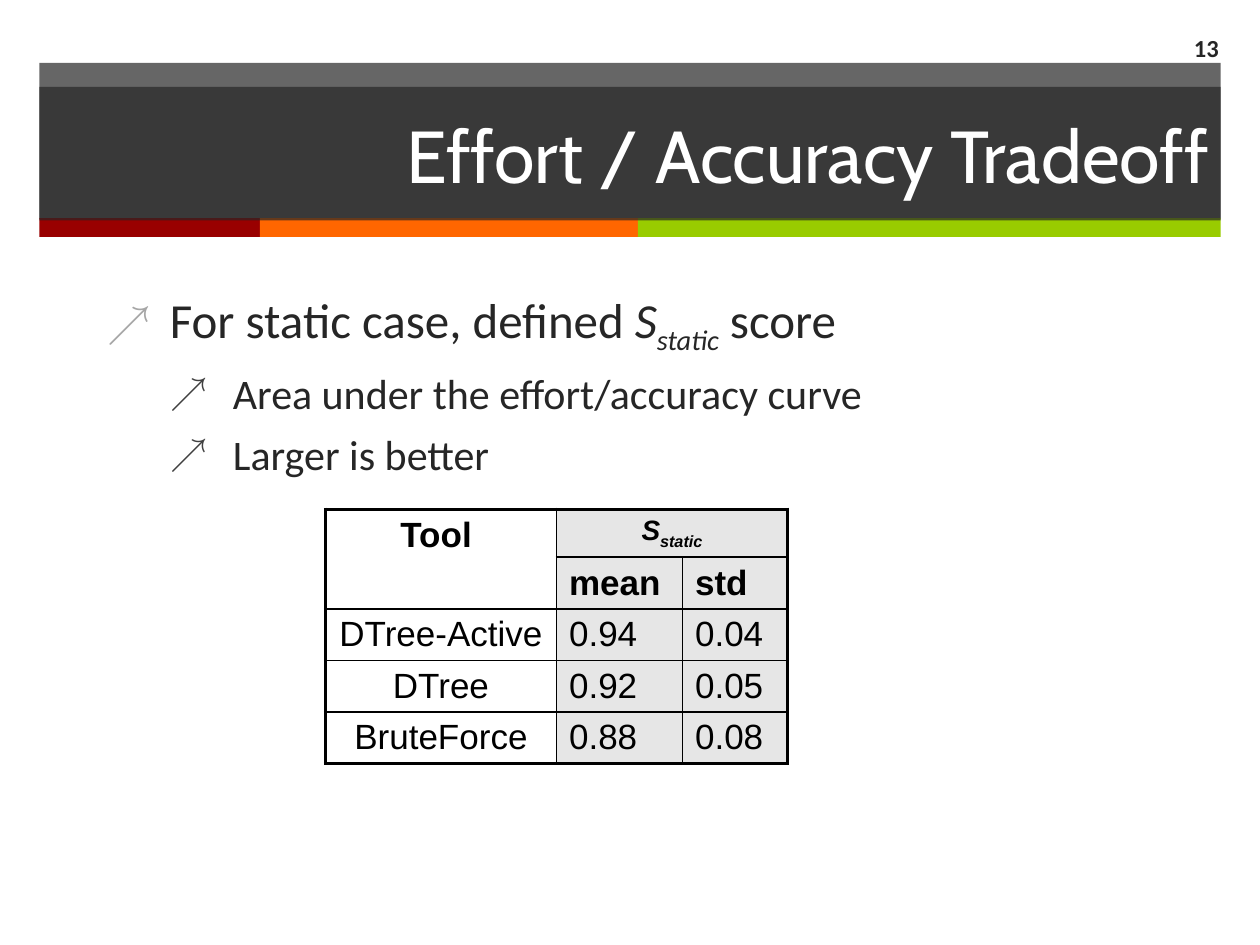
import pptx
import pptx.util
import pptx.dml.color
import pptx.enum.shapes
import pptx.enum.text
import pptx.oxml.ns
from lxml import etree

Pt = pptx.util.Pt
RGB = pptx.dml.color.RGBColor
ALIGN = pptx.enum.text.PP_ALIGN
MIDDLE = pptx.enum.text.MSO_ANCHOR.MIDDLE
qn = pptx.oxml.ns.qn

WHITE = RGB(0xFF, 0xFF, 0xFF)
BLACK = RGB(0, 0, 0)
CHARCOAL = RGB(0x26, 0x26, 0x26)
SHADE = RGB(0xE6, 0xE6, 0xE6)
RED = RGB(0x99, 0, 0)
ORANGE = RGB(0xFF, 0x66, 0)
GREEN = RGB(0x99, 0xCC, 0)
BULLET_LIGHT = RGB(0xA6, 0xA6, 0xA6)
BULLET_DARK = RGB(0x40, 0x40, 0x40)

TITLE = "Effort / Accuracy Tradeoff"
PAGE = "13"
# Each text is a list of (words, style); style is "", "italic" or "sub"
SCORE = [("S", "italic"), ("static", "sub")]
POINTS = [
    (0, [("For static case, defined ", "")] + SCORE + [(" score", "")]),
    (1, [("Area under the effort/accuracy curve", "")]),
    (1, [("Larger is better", "")]),
]
# level: text size, left indent, space before, bullet colour
LEVELS = {0: (28, 36, 20, BULLET_LIGHT), 1: (24, 72, 6, BULLET_DARK)}
HEADERS = [["Tool ", SCORE, None], [None, "mean", "std"]]
RESULTS = [("DTree-Active", "0.94", "0.04"),
           ("DTree", "0.92", "0.05"),
           ("BruteForce", "0.88", "0.08")]
COLUMN_WIDTHS = [132, 72, 60]
ROW_HEIGHTS = [27.4] + [29.5] * 4
STRIPES = [(RED, 126), (ORANGE, 216), (GREEN, 333)]
BAR_LEFT = 22.5
BAR_WIDTH = sum(width for _, width in STRIPES)


def add_runs(paragraph, parts, size, font, color, bold=False):
    for words, style in parts:
        run = paragraph.add_run()
        run.text = words
        run.font.size = Pt(size)
        run.font.name = font
        run.font.color.rgb = color
        run.font.bold = bold
        run.font.italic = style != ""
        if style == "sub":
            run.font._element.set("baseline", "-25000")


def add_bar(slide, left, top, width, height, color, opacity=100):
    bar = slide.shapes.add_shape(pptx.enum.shapes.MSO_SHAPE.RECTANGLE,
                                 Pt(left), Pt(top), Pt(width), Pt(height))
    bar.shadow.inherit = False
    bar.fill.solid()
    bar.fill.fore_color.rgb = color
    bar.line.fill.background()
    if opacity < 100:
        tint = bar.fill._xPr.find(".//" + qn("a:srgbClr"))
        etree.SubElement(tint, qn("a:alpha"), val=str(opacity * 1000))
    return bar


def add_text_box(slide, left, top, width, height):
    frame = slide.shapes.add_textbox(Pt(left), Pt(top), Pt(width), Pt(height)).text_frame
    frame.word_wrap = True
    return frame


def set_bullet(paragraph, indent, color):
    props = paragraph._p.get_or_add_pPr()
    props.set("marL", str(Pt(indent)))
    props.set("indent", str(Pt(-36)))
    tint = etree.SubElement(props, qn("a:buClr"))
    etree.SubElement(tint, qn("a:srgbClr"), val=str(color))
    etree.SubElement(props, qn("a:buSzPct"), val="90000")
    etree.SubElement(props, qn("a:buFont"), typeface="Arial")
    etree.SubElement(props, qn("a:buChar"), char="↗")


def set_borders(cell, outer_sides):
    """Draw thin borders, and thick ones on the sides at the table's edge."""
    props = cell._tc.get_or_add_tcPr()
    for position, side in enumerate("LRTB"):
        width = Pt(2.25 if side in outer_sides else 1)
        line = etree.Element(qn("a:ln" + side), w=str(width))
        fill = etree.SubElement(line, qn("a:solidFill"))
        etree.SubElement(fill, qn("a:srgbClr"), val=str(BLACK))
        props.insert(position, line)


def add_header(slide):
    add_bar(slide, BAR_LEFT, 36, BAR_WIDTH, 89, CHARCOAL, 70)
    left = BAR_LEFT
    for color, width in STRIPES:
        add_bar(slide, left, 124.6, width, 10.8, color)
        left += width
    title = add_bar(slide, BAR_LEFT, 49.7, BAR_WIDTH, 76.3, CHARCOAL, 70).text_frame
    title.vertical_anchor = MIDDLE
    title.paragraphs[0].alignment = ALIGN.RIGHT
    add_runs(title.paragraphs[0], [(TITLE, "")], 42, "Cabin", WHITE)


def add_points(slide):
    body = add_text_box(slide, 54, 162, 643.5, 378)
    for number, (level, parts) in enumerate(POINTS):
        size, indent, before, bullet_color = LEVELS[level]
        paragraph = body.add_paragraph() if number else body.paragraphs[0]
        paragraph.level = level
        paragraph.space_before = Pt(before)
        set_bullet(paragraph, indent, bullet_color)
        add_runs(paragraph, parts, size, "Calibri", CHARCOAL)


def add_scores(slide):
    rows = HEADERS + RESULTS
    row_count, column_count = len(rows), len(COLUMN_WIDTHS)
    table = slide.shapes.add_table(row_count, column_count, Pt(186), Pt(291),
                                   Pt(sum(COLUMN_WIDTHS)), Pt(sum(ROW_HEIGHTS))).table
    table.first_row = table.horz_banding = False
    for column, width in zip(table.columns, COLUMN_WIDTHS):
        column.width = Pt(width)
    for row, height in zip(table.rows, ROW_HEIGHTS):
        row.height = Pt(height)
    table.cell(0, 0).merge(table.cell(1, 0))
    table.cell(0, 1).merge(table.cell(0, 2))

    for r, row in enumerate(rows):
        for c, content in enumerate(row):
            cell = table.cell(r, c)
            cell.margin_bottom = Pt(1)
            if content is None:
                continue
            if c:
                cell.fill.solid()
                cell.fill.fore_color.rgb = SHADE
            else:
                cell.fill.background()
            at_edge = {"L": c == 0, "R": c + cell.span_width == column_count,
                       "T": r == 0, "B": r + cell.span_height == row_count}
            set_borders(cell, [side for side in at_edge if at_edge[side]])
            paragraph = cell.text_frame.paragraphs[0]
            centred = c == 0 or content is SCORE
            paragraph.alignment = ALIGN.CENTER if centred else ALIGN.LEFT
            parts = content if content is SCORE else [(content, "")]
            add_runs(paragraph, parts, 16 if content is SCORE else 20,
                     "Arial", BLACK, bold=r < len(HEADERS))


def main():
    deck = pptx.Presentation()
    deck.slide_width, deck.slide_height = Pt(720), Pt(540)
    slide = deck.slides.add_slide(deck.slide_layouts[6])
    add_header(slide)
    add_points(slide)
    add_scores(slide)
    page = add_text_box(slide, 653.8, 13, 49.7, 28)
    page.vertical_anchor = MIDDLE
    page.paragraphs[0].alignment = ALIGN.RIGHT
    add_runs(page.paragraphs[0], [(PAGE, "")], 14, "Calibri", CHARCOAL, bold=True)
    deck.save("out.pptx")


if __name__ == "__main__":
    main()
